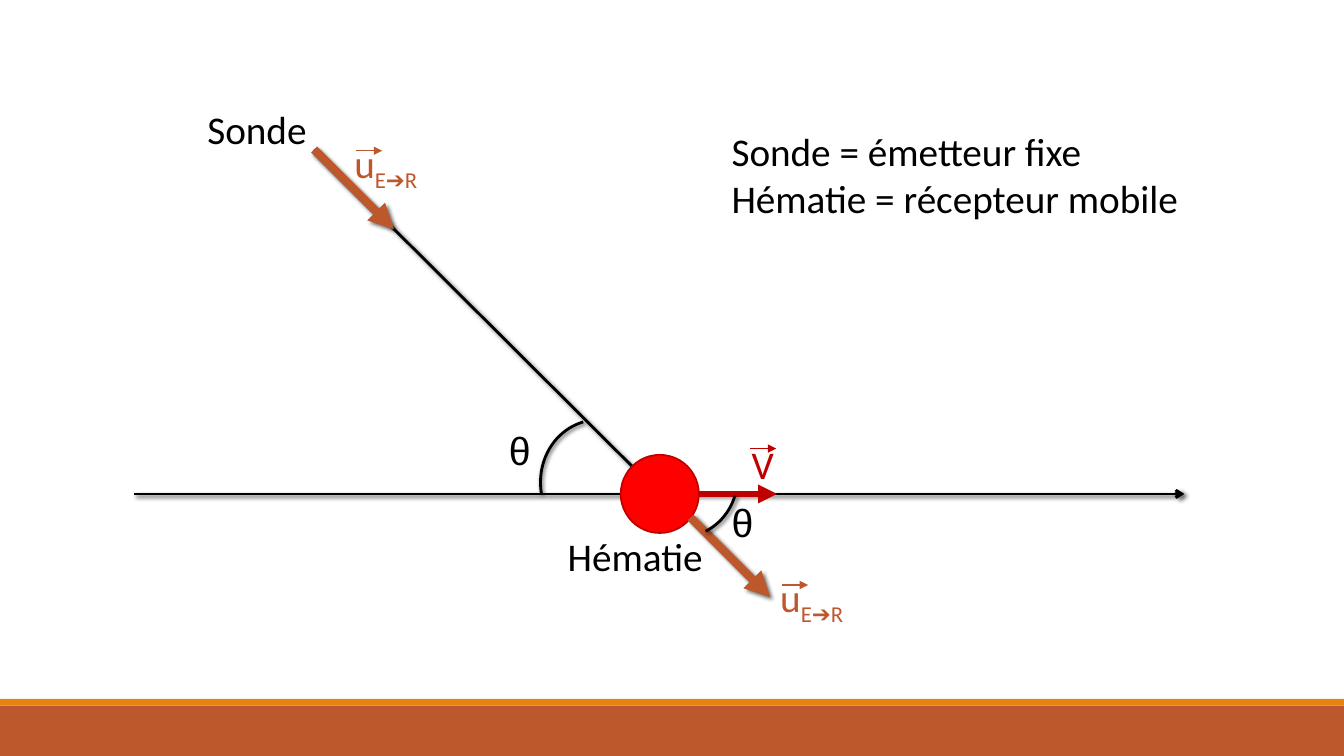
from lxml.etree import SubElement
from pptx import Presentation
from pptx.dml.color import RGBColor
from pptx.enum.shapes import MSO_CONNECTOR, MSO_SHAPE
from pptx.enum.text import MSO_AUTO_SIZE
from pptx.oxml.ns import qn
from pptx.util import Inches, Pt

BLACK = RGBColor(0x00, 0x00, 0x00)
RED = RGBColor(0xFF, 0x00, 0x00)
DARK_RED = RGBColor(0xC0, 0x00, 0x00)
RUST = RGBColor(0xBD, 0x58, 0x2C)
ORANGE = RGBColor(0xE4, 0x83, 0x12)

COLUMNS, ROWS = 160, 90
AXIS_ROW, CELL_COL, CELL_SIZE = 58.8, 78.55, 9.3
CELL_RIGHT = CELL_COL + CELL_SIZE / 2
PROBE = (37.4, 17.8)


class Diagram:
    """Draws styled elements on one slide laid out on a 160 by 90 grid."""

    def __init__(self, prs):
        self.slide = prs.slides.add_slide(prs.slide_layouts[6])
        self.shapes = self.slide.shapes
        self.col = prs.slide_width / COLUMNS
        self.row = prs.slide_height / ROWS
        self.font, self.size = "Calibri", Pt(28)

    def grid(self, x, y):
        return round(x * self.col), round(y * self.row)

    def effect(self, sp, shadow):
        effects = SubElement(sp._element.spPr, qn("a:effectLst"))
        if shadow:
            outer = SubElement(effects, qn("a:outerShdw"), blurRad=str(Pt(3)),
                               dist=str(Pt(2)), dir="2700000", rotWithShape="0")
            color = SubElement(outer, qn("a:srgbClr"), val="000000")
            SubElement(color, qn("a:alpha"), val="60000")

    def shape(self, kind, x, y, w, h, fill=None, line=None, width=1.25, shadow=False):
        sp = self.shapes.add_shape(kind, *self.grid(x, y), *self.grid(w, h))
        if fill is None:
            sp.fill.background()
        else:
            sp.fill.solid()
            sp.fill.fore_color.rgb = fill
        if line is None:
            sp.line.fill.background()
        else:
            sp.line.color.rgb = line
            sp.line.width = Pt(width)
        self.effect(sp, shadow)
        return sp

    def arc(self, x, y, rotation, start):
        sp = self.shape(MSO_SHAPE.ARC, x, y, 15.7, 14.5, line=BLACK, width=2, shadow=True)
        sp.rotation = rotation
        sp.adjustments[0] = start
        sp.adjustments[1] = 0

    def line(self, start, end, color, width, head=None, shadow=False):
        cx = self.shapes.add_connector(MSO_CONNECTOR.STRAIGHT, *self.grid(*start),
                                       *self.grid(*end))
        cx.line.color.rgb = color
        cx.line.width = Pt(width)
        if head:
            SubElement(cx.line._get_or_add_ln(), qn("a:tailEnd"), type=head)
        self.effect(cx, shadow)

    def text(self, x, y, *lines, w=21.4, h=6.9, color=BLACK, font=None, sub=None, wrap=True):
        tf = self.shapes.add_textbox(*self.grid(x, y), *self.grid(w, h)).text_frame
        tf.word_wrap = wrap
        tf.auto_size = MSO_AUTO_SIZE.SHAPE_TO_FIT_TEXT
        for i, line in enumerate(lines):
            p = tf.add_paragraph() if i else tf.paragraphs[0]
            self.run(p, line, color, font)
            if sub:
                r = self.run(p, sub, color, font)
                r._r.get_or_add_rPr().set("baseline", "-25000")

    def run(self, p, text, color, font):
        r = p.add_run()
        r.text = text
        r.font.name, r.font.size = font or self.font, self.size
        r.font.color.rgb = color
        return r

    def vector_label(self, x, y, name, color, dx, dy, sub=None):
        self.text(x, y, name, color=color, sub=sub)
        self.line((x + dx, y + dy), (x + dx + 3.1, y + dy), color, 1, "triangle")


def main():
    prs = Presentation()
    prs.slide_width, prs.slide_height = Inches(13.33), Inches(7.5)
    d = Diagram(prs)

    d.shape(MSO_SHAPE.RECTANGLE, 0, 84, COLUMNS, 6, RUST)
    d.shape(MSO_SHAPE.RECTANGLE, 0, 83.2, COLUMNS, 0.8, ORANGE)

    d.line((CELL_COL, AXIS_ROW), PROBE, BLACK, 2, shadow=True)
    d.line((16, AXIS_ROW), (141, AXIS_ROW), BLACK, 2, "arrow", True)
    d.shape(MSO_SHAPE.OVAL, CELL_COL - CELL_SIZE / 2, AXIS_ROW - CELL_SIZE / 2,
            CELL_SIZE, CELL_SIZE, RED, DARK_RED)
    d.text(23.5, 12, "Sonde", w=14.3)
    d.text(66.4, 62.8, "Hématie")

    d.line((CELL_RIGHT, AXIS_ROW), (92.5, AXIS_ROW), DARK_RED, 4.5, "triangle")
    for x, y in (PROBE, (82.2, 61.6)):
        d.line((x, y), (x + 9.5, y + 9.5), RUST, 6, "triangle", True)

    d.arc(63.8, 50.5, 253.6, 167.27)
    d.arc(72.6, 49, 63.1, 190.97)
    for x, y in ((59.4, 50.2), (85.9, 58.7)):
        d.text(x, y, "θ", font="Arial")

    d.vector_label(88.3, 51.8, "V", DARK_RED, 1, 1.6)
    for x, y in ((41, 16), (91.7, 67.7)):
        d.vector_label(x, y, "u", RUST, 1.4, 1.95, "E➔R")

    d.text(85.9, 14.6, "Sonde = émetteur fixe", "Hématie = récepteur mobile",
           w=56.2, h=12.5, wrap=False)
    prs.save("out.pptx")


if __name__ == "__main__":
    main()
